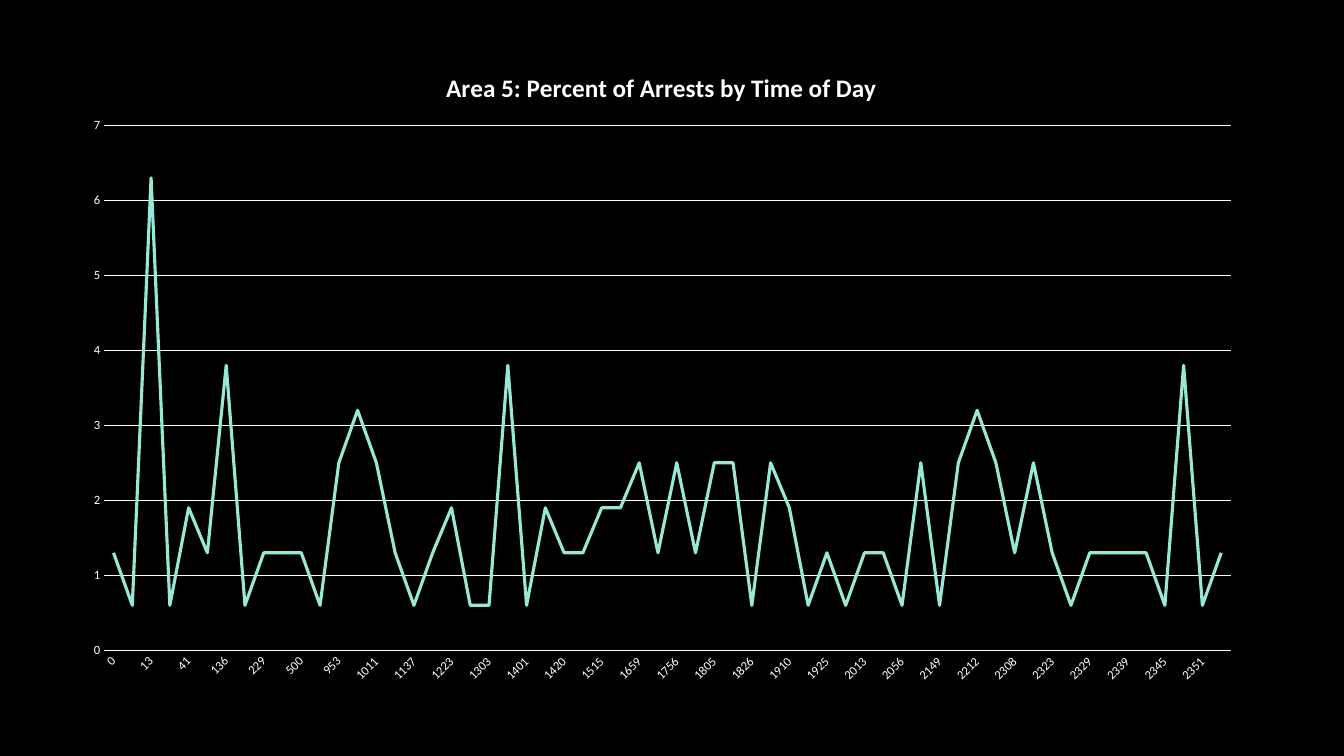
from lxml import etree
from pptx import Presentation
from pptx import util as u
from pptx.chart.data import CategoryChartData
from pptx.dml.color import RGBColor
from pptx.enum import chart as charts
from pptx.oxml import ns

BLACK = RGBColor(0x00, 0x00, 0x00)
WHITE = RGBColor(0xFF, 0xFF, 0xFF)
MINT = RGBColor(0x97, 0xE9, 0xD5)
FONT = "Calibri"

TITLE = "Area 5: Percent of Arrests by Time of Day"
TIMES = """0 6 13 22 41 103 136 139 229 235 500 941 953 959 1011 1131 1137 1149
1223 1300 1303 1323 1401 1411 1420 1445 1515 1533 1659 1745 1756 1800 1805 1806
1826 1829 1910 1911 1925 2002 2013 2040 2056 2121 2149 2200 2212 2255 2308 2309
2323 2326 2329 2338 2339 2341 2345 2348 2351 2356""".split()
PERCENTS = [
    1.3, 0.6, 6.3, 0.6, 1.9, 1.3, 3.8, 0.6, 1.3, 1.3, 1.3, 0.6, 2.5, 3.2, 2.5,
    1.3, 0.6, 1.3, 1.9, 0.6, 0.6, 3.8, 0.6, 1.9, 1.3, 1.3, 1.9, 1.9, 2.5, 1.3,
    2.5, 1.3, 2.5, 2.5, 0.6, 2.5, 1.9, 0.6, 1.3, 0.6, 1.3, 1.3, 0.6, 2.5, 0.6,
    2.5, 3.2, 2.5, 1.3, 2.5, 1.3, 0.6, 1.3, 1.3, 1.3, 1.3, 0.6, 3.8, 0.6, 1.3,
]


def style_font(font, size, bold=False):
    font.name = FONT
    font.size = u.Pt(size)
    font.bold = bold
    font.color.rgb = WHITE


def style_line(line, color, width):
    line.color.rgb = color
    line.width = u.Pt(width)


def style_axis(axis):
    axis.major_tick_mark = charts.XL_TICK_MARK.NONE
    axis.minor_tick_mark = charts.XL_TICK_MARK.NONE
    style_font(axis.tick_labels.font, 9)


def style_time_axis(axis):
    style_axis(axis)
    style_line(axis.format.line, WHITE, 0.75)
    element = axis._element
    element.find(".//" + ns.qn("a:bodyPr")).set("rot", "-2700000")
    label_skip = etree.Element(ns.qn("c:tickLblSkip"), val="2")
    element.find(ns.qn("c:noMultiLvlLbl")).addprevious(label_skip)


def style_percent_axis(axis):
    style_axis(axis)
    axis.minimum_scale, axis.maximum_scale, axis.major_unit = 0, 7, 1
    axis.tick_labels.number_format = "General"
    axis.tick_labels.number_format_is_linked = False
    axis.format.line.fill.background()
    style_line(axis.major_gridlines.format.line, WHITE, 0.75)


def place_plot(chart, x, y, width, height):
    plot_area = chart._chartSpace.chart.plotArea
    for old_layout in plot_area.findall(ns.qn("c:layout")):
        plot_area.remove(old_layout)
    layout = etree.Element(ns.qn("c:layout"))
    manual = etree.SubElement(layout, ns.qn("c:manualLayout"))
    settings = dict(layoutTarget="inner", xMode="edge", yMode="edge",
                    x=x, y=y, w=width, h=height)
    for name, value in settings.items():
        etree.SubElement(manual, ns.qn("c:" + name), val=str(value))
    plot_area.insert(0, layout)


def add_arrests_chart(slide, left, top, width, height):
    data = CategoryChartData()
    data.categories = TIMES
    data.add_series("Series 1", PERCENTS)
    chart = slide.shapes.add_chart(
        charts.XL_CHART_TYPE.LINE, u.Pt(left), u.Pt(top),
        u.Pt(width), u.Pt(height), data).chart
    style_font(chart.font, 10)
    chart.has_legend = False
    chart.has_title = True
    chart.chart_title.include_in_layout = False
    title = chart.chart_title.text_frame.paragraphs[0]
    title.text = TITLE
    style_font(title.font, 18, bold=True)
    style_time_axis(chart.category_axis)
    style_percent_axis(chart.value_axis)
    place_plot(chart, 0.03, 0.12, 0.95, 0.81)
    plot = chart.plots[0]
    plot.vary_by_categories = False
    series = plot.series[0]
    series.smooth = False
    series.marker.style = charts.XL_MARKER_STYLE.NONE
    style_line(series.format.line, MINT, 2.25)


def main():
    presentation = Presentation()
    presentation.slide_width = u.Pt(960)
    presentation.slide_height = u.Pt(540)
    slide = presentation.slides.add_slide(presentation.slide_layouts[6])
    slide.background.fill.solid()
    slide.background.fill.fore_color.rgb = BLACK
    add_arrests_chart(slide, 49, 34, 847, 463)
    presentation.save("out.pptx")


if __name__ == "__main__":
    main()
